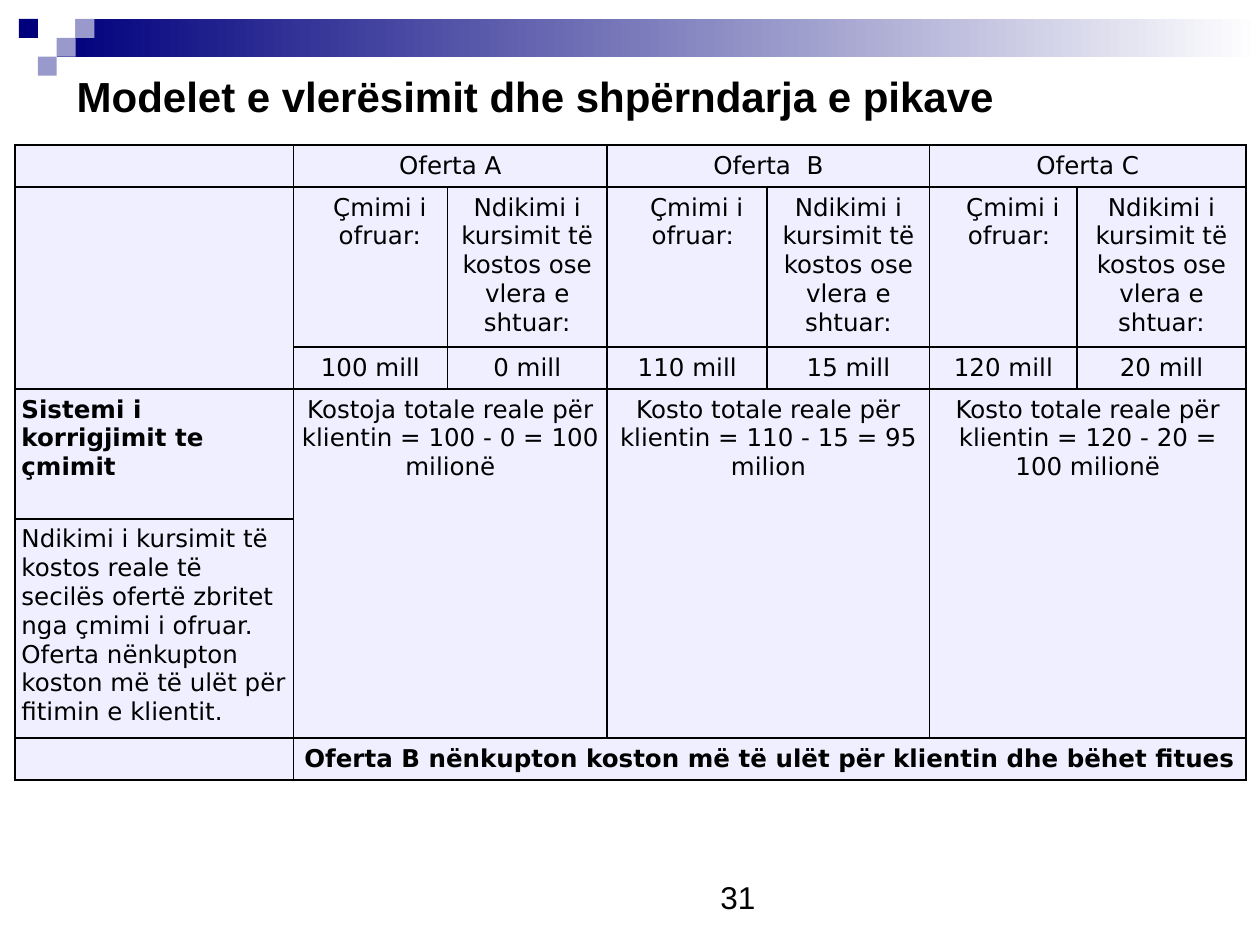
from lxml.etree import SubElement
from pptx import Presentation
from pptx.dml.color import RGBColor
from pptx.enum.shapes import MSO_SHAPE
from pptx.enum.text import PP_ALIGN
from pptx.oxml.ns import qn
from pptx.util import Emu, Inches, Pt

NAVY, LILAC, PALE, WHITE, BLACK = "00007D", "9999CC", "EFEFFF", "FFFFFF", "000000"
UNIT = 0.15  # side of one square in the corner motif
SQUARES = [(3, 1, WHITE), (4, 1, LILAC), (1, 1, NAVY), (3, 2, LILAC), (2, 3, LILAC)]

TEXTS = [
    ("Modelet e vlerësimit dhe shpërndarja e pikave", (0.51, 0.51, 7.55, 0.5),
     {"size": Pt(24), "bold": True}),
    ("31", (5.62, 6.92, 0.64, 0.4), {"size": Pt(18)}),
]

COLS = [2.21, 1.22, 1.27, 1.27, 1.29, 1.17, 1.34]
ROWS = [0.33, 1.27, 0.33, 1.03, 1.74, 0.33]
SAVING = "Ndikimi i kursimit të kostos ose vlera e shtuar:"
OFFERS = [
    ("Oferta A", "Çmimi i ofruar:", "100 mill", "0 mill",
     "Kostoja totale reale për klientin = 100 - 0 = 100 milionë"),
    ("Oferta  B", "Çmimi i ofruar: ", "110 mill", "15 mill",
     "Kosto totale reale për klientin = 110 - 15 = 95 milion"),
    ("Oferta C", "Çmimi i ofruar: ", "120 mill", "20 mill",
     "Kosto totale reale për klientin = 120 - 20 = 100 milionë"),
]
METHOD = "Sistemi i  korrigjimit te çmimit"
DETAIL = ("Ndikimi i kursimit të kostos reale të secilës ofertë zbritet nga çmimi "
          "i ofruar. Oferta nënkupton koston më të ulët për fitimin e klientit.")
RESULT = "Oferta B nënkupton koston më të ulët për klientin dhe bëhet fitues"


def rgb(code):
    return RGBColor.from_string(code)


def style(font, **form):
    font.color.rgb = rgb(BLACK)
    for name, value in form.items():
        setattr(font, name, value)


def add_rect(slide, *box):
    rect = slide.shapes.add_shape(MSO_SHAPE.RECTANGLE, *map(Inches, box))
    rect.shadow.inherit = False
    rect.line.fill.background()
    return rect


def add_motif(slide):
    bar = add_rect(slide, 3 * UNIT, UNIT, 10 - 3 * UNIT, 2 * UNIT)
    bar.fill.gradient()
    bar.fill.gradient_angle = 0
    for stop, code in zip(bar.fill.gradient_stops, (NAVY, WHITE)):
        stop.color.rgb = rgb(code)
    for col, row, code in SQUARES:
        square = add_rect(slide, col * UNIT, row * UNIT, UNIT, UNIT)
        square.fill.solid()
        square.fill.fore_color.rgb = rgb(code)


def add_text(slide, text, box, form):
    frame = slide.shapes.add_textbox(*map(Inches, box)).text_frame
    frame.word_wrap = False
    run = frame.paragraphs[0].add_run()
    run.text = text
    style(run.font, name="Arial", **form)


def dress(cell):
    """Give a cell its margins, borders, fill and base text size."""
    for side in ("left", "right", "top", "bottom"):
        setattr(cell, "margin_" + side, Inches(0.05))
    props = cell._tc.get_or_add_tcPr()
    for side in "LRTB":
        line = SubElement(props, qn("a:ln" + side), w=str(Pt(1)))
        SubElement(SubElement(line, qn("a:solidFill")), qn("a:srgbClr"), val=BLACK)
    cell.fill.solid()
    cell.fill.fore_color.rgb = rgb(PALE)
    SubElement(cell.text_frame.paragraphs[0]._p, qn("a:endParaRPr"), sz="1400")


def write(cell, text, align=PP_ALIGN.CENTER, bold=False, indent=0):
    para = cell.text_frame.paragraphs[0]
    para.alignment = align
    if indent:
        para._p.get_or_add_pPr().set("marL", str(Inches(indent)))
    run = para.add_run()
    run.text = text
    style(run.font, name="DejaVu Sans", size=Pt(14), bold=bold)


def add_grid(slide):
    box = map(Inches, (0.12, 1.15, sum(COLS), sum(ROWS)))
    table = slide.shapes.add_table(len(ROWS), len(COLS), *box).table
    for col, width in zip(table.columns, COLS):
        col.width = Inches(width)
    for row, height in zip(table.rows, ROWS):
        row.height = Inches(height)
    for cell in table.iter_cells():
        dress(cell)

    at = table.cell
    for k, (name, price, cost, gain, total) in enumerate(OFFERS):
        left = 1 + 2 * k
        at(0, left).merge(at(0, left + 1))
        at(3, left).merge(at(4, left + 1))
        write(at(0, left), name)
        write(at(1, left), price, indent=0.15)
        write(at(1, left + 1), SAVING)
        write(at(2, left), cost)
        write(at(2, left + 1), gain)
        write(at(3, left), total)
    at(1, 0).merge(at(2, 0))
    at(5, 1).merge(at(5, 6))
    write(at(3, 0), METHOD, PP_ALIGN.LEFT, bold=True)
    write(at(4, 0), DETAIL, PP_ALIGN.LEFT)
    write(at(5, 1), RESULT, bold=True)


def main():
    deck = Presentation()
    deck.slide_width, deck.slide_height = Inches(10), Inches(7.5)
    slide = deck.slides.add_slide(deck.slide_layouts[6])
    add_motif(slide)
    for text, box, form in TEXTS:
        add_text(slide, text, box, form)
    add_grid(slide)
    deck.save("out.pptx")


if __name__ == "__main__":
    main()
